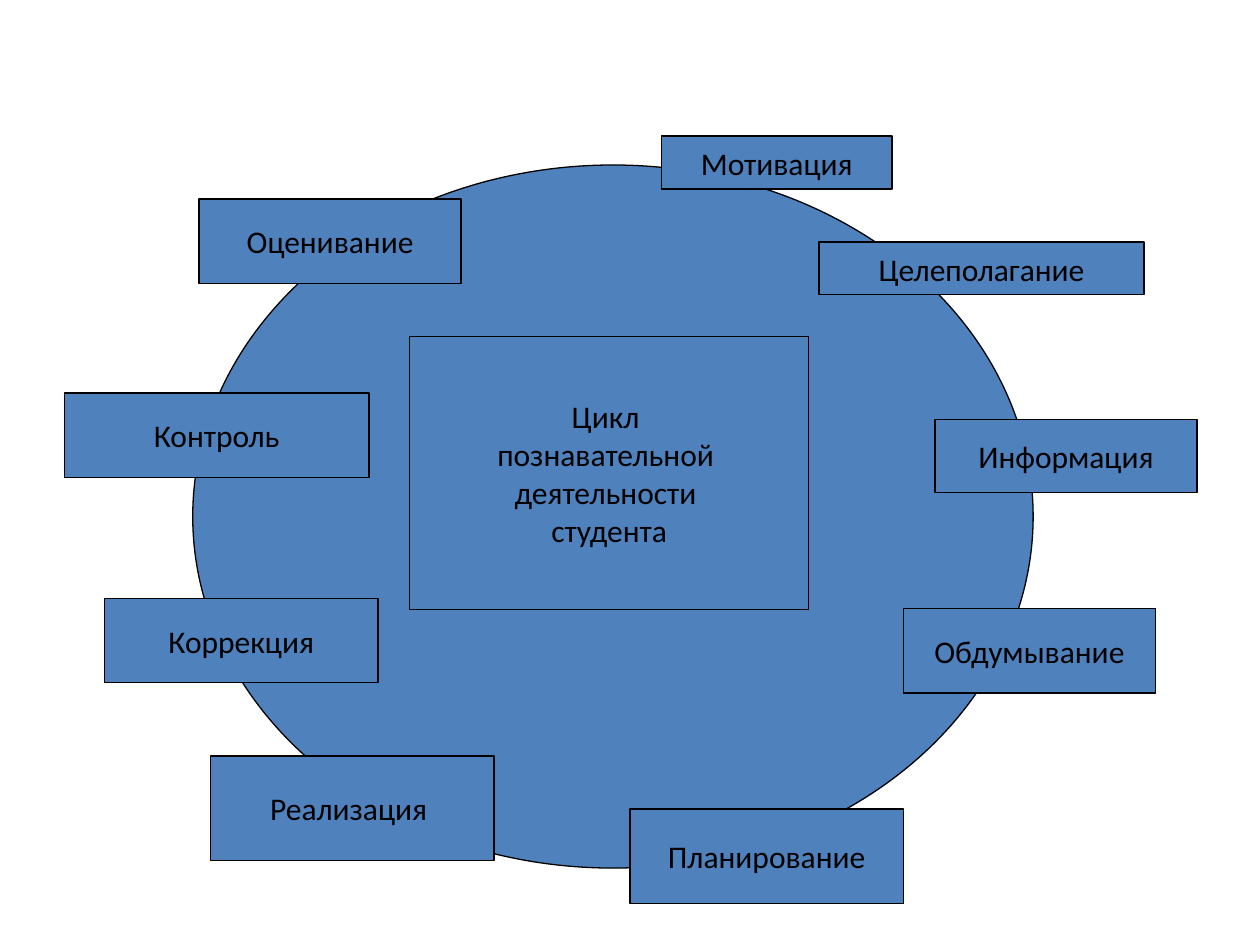
from dataclasses import dataclass

from pptx import Presentation
from pptx.dml.color import RGBColor
from pptx.enum.shapes import MSO_SHAPE
from pptx.enum.text import MSO_ANCHOR, PP_ALIGN
from pptx.util import Inches, Pt

OVAL, RECTANGLE = MSO_SHAPE.OVAL, MSO_SHAPE.RECTANGLE
MIDDLE, CENTER = MSO_ANCHOR.MIDDLE, PP_ALIGN.CENTER


@dataclass(frozen=True)
class Theme:
    fill: RGBColor = RGBColor(0x4F, 0x81, 0xBD)
    ink: RGBColor = RGBColor(0, 0, 0)
    font: str = "Calibri"
    size: Pt = Pt(18)
    outline: Pt = Pt(0.75)


theme = Theme()
label_format = {"name": theme.font, "size": theme.size}


def add_block(kind, left, top, width, height, lines=()):
    block = slide.shapes.add_shape(
        kind, Inches(left), Inches(top), Inches(width), Inches(height))
    block.shadow.inherit = False
    block.fill.solid()
    block.fill.fore_color.rgb = theme.fill
    block.line.color.rgb = theme.ink
    block.line.width = theme.outline

    frame = block.text_frame
    frame.word_wrap = False
    frame.vertical_anchor = MIDDLE
    for index, line in enumerate(lines):
        paragraph = frame.add_paragraph() if index else frame.paragraphs[0]
        paragraph.alignment = CENTER
        run = paragraph.add_run()
        run.text = line
        for attribute, value in label_format.items():
            setattr(run.font, attribute, value)
        run.font.color.rgb = theme.ink


presentation = Presentation()
presentation.slide_width = Inches(10)
presentation.slide_height = Inches(7.5)
slide = presentation.slides.add_slide(presentation.slide_layouts[6])

# Cycle and its title
add_block(OVAL, 1.53, 1.31, 6.67, 5.58)
add_block(RECTANGLE, 3.25, 2.67, 3.17, 2.17,
          ["Цикл ", "познавательной ", "деятельности ", "студента"])

# Stages, clockwise from the top: left, top, width, height
stages = {
    "Мотивация": (5.25, 1.08, 1.83, 0.42),
    "Целеполагание": (6.5, 1.92, 2.58, 0.42),
    "Информация": (7.42, 3.33, 2.08, 0.58),
    "Обдумывание": (7.17, 4.83, 2, 0.67),
    "Планирование": (5, 6.42, 2.17, 0.75),
    "Реализация ": (1.67, 6, 2.25, 0.83),
    "Коррекция": (0.83, 4.75, 2.17, 0.67),
    "Контроль": (0.51, 3.12, 2.42, 0.67),
    "Оценивание": (1.58, 1.58, 2.08, 0.67),
}
for stage, position in stages.items():
    add_block(RECTANGLE, *position, [stage])

presentation.save("out.pptx")
